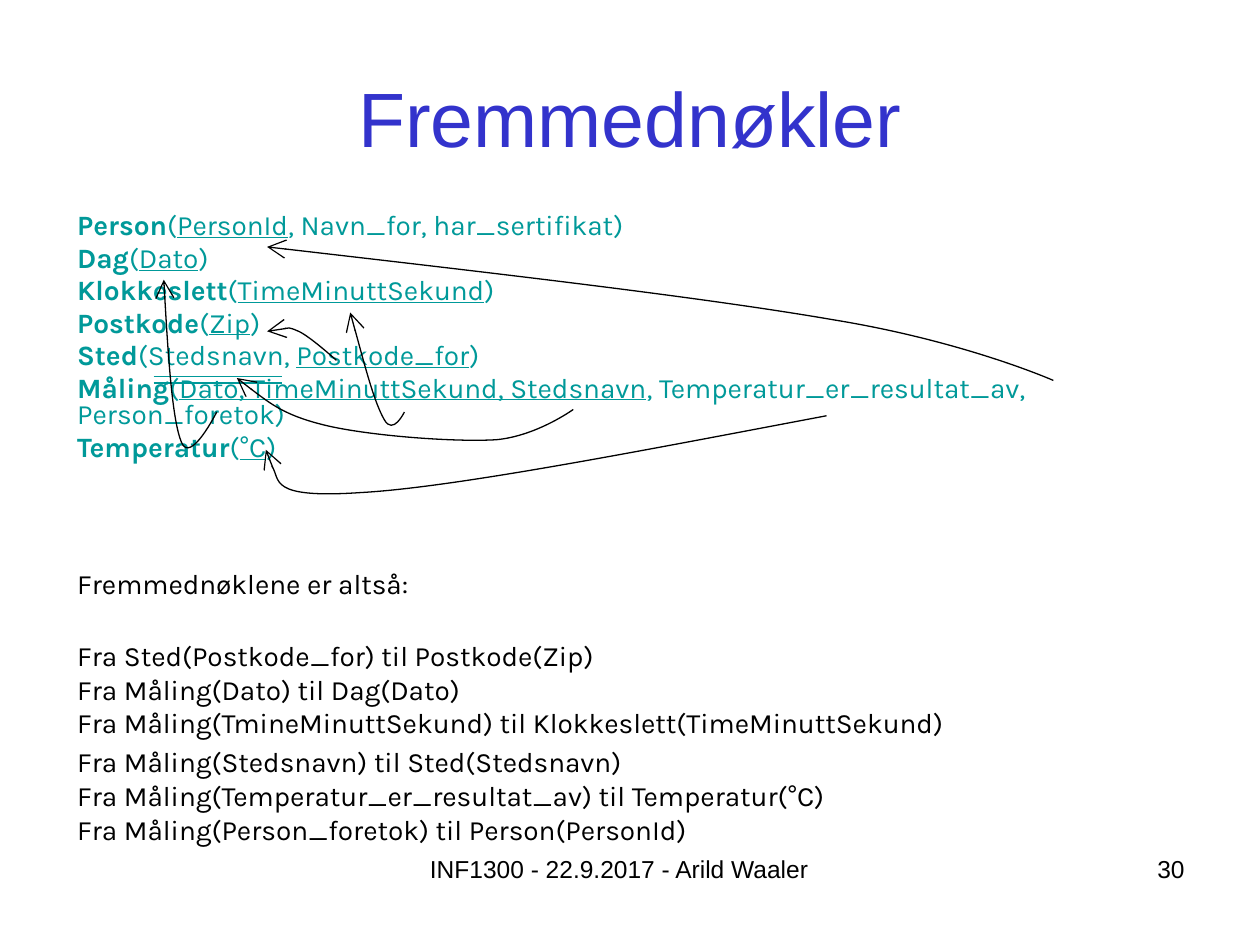
from copy import deepcopy
from dataclasses import dataclass
from lxml.etree import SubElement
from pptx import Presentation
from pptx.dml.color import RGBColor as Rgb
from pptx.enum.shapes import MSO_CONNECTOR as Conn
from pptx.enum.text import MSO_ANCHOR as Anchor, PP_ALIGN as Align
from pptx.oxml.ns import qn
from pptx.util import Inches, Pt


@dataclass(frozen=True)
class Theme:
    ink: Rgb = Rgb(0, 0, 0)
    teal: Rgb = Rgb(0, 0x99, 0x99)
    blue: Rgb = Rgb(0x33, 0x33, 0xCC)
    sans: str = "Arial"
    body: str = "Karla"
    head: float = 44
    text: float = 16
    foot: float = 14
    gap: float = 3.2
    line: float = 0.75


THEME = Theme()
CELL = 0.1  # inches; the slide is 100 columns by 75 rows
COLS, ROWS = 100, 75

# Relation name and its columns; "|" switches underlining on and off
TABLES = [
    ("Person", "(|PersonId|, Navn_for, har_sertifikat)"),
    ("Dag", "(|Dato|)"),
    ("Klokkeslett", "(|TimeMinuttSekund|)"),
    ("Postkode", "(|Zip|)"),
    ("Sted", "(Stedsnavn, |Postkode_for|)"),
    ("Måling", "(|Dato, TimeMinuttSekund, Stedsnavn|, "
               "Temperatur_er_resultat_av, Person_foretok)"),
    ("Temperatur", "(|°C|)"),
]

# Space before in points, then the lines of the paragraph
KEYS = [
    (59.2, ["Fremmednøklene er altså:"]),
    (22, ["Fra Sted(Postkode_for) til Postkode(Zip)",
          "Fra Måling(Dato) til Dag(Dato)",
          "Fra Måling(TmineMinuttSekund) til Klokkeslett(TimeMinuttSekund)"]),
    (THEME.gap, ["Fra Måling(Stedsnavn) til Sted(Stedsnavn)",
                 "Fra Måling(Temperatur_er_resultat_av) til Temperatur(°C)",
                 "Fra Måling(Person_foretok) til Person(PersonId)"]),
]

# Arrow end, then Bezier points in grid cells
ARROWS = [
    ("headEnd", [(21.2, 19.6), (38.5, 21.6), (55.8, 23.6), (66.2, 25.4),
                 (76.6, 27.1), (83.6, 30.2), (83.6, 30.2)]),
    ("headEnd", [(21.2, 26.3), (22, 26.1), (22.8, 25.9), (23.7, 26.3),
                 (24.6, 26.7), (26.7, 28.6), (26.7, 28.6)]),
    ("headEnd", [(18.8, 30), (20.7, 31.5), (22.6, 33), (26, 33.8),
                 (29.5, 34.6), (36.1, 35.1), (39.4, 34.9),
                 (42.6, 34.6), (45.5, 32.5), (45.5, 32.5)]),
    ("headEnd", [(13, 22.2), (13.3, 27.8), (13.7, 33.4), (14.4, 35.1),
                 (15.1, 36.9), (17.2, 32.7), (17.2, 32.7)]),
    ("headEnd", [(27.8, 24.8), (28.8, 28.4), (29.7, 31.9), (30.5, 33.3),
                 (31.2, 34.6), (32.1, 32.7), (32.1, 32.7)]),
    ("tailEnd", [(65.6, 33), (50.8, 35.8), (36, 38.7), (28.6, 39.1),
                 (21.2, 39.6), (21.1, 35.7), (21.1, 35.7)]),
]


def grid(*cells):
    return [Inches(cell * CELL) for cell in cells]


def style(item, **form):
    for name, value in form.items():
        setattr(item, name, value)


def add_run(para, text, color, size=THEME.text, face=THEME.body, **form):
    run = para.add_run()
    run.text = text
    style(run.font, size=Pt(size), name=face, **form)
    run.font.color.rgb = color


def add_break(para):
    """Break the line, keeping the format of the run before."""
    para.add_line_break()
    last, mark = para._p[-2:]
    mark.append(deepcopy(last.find(qn("a:rPr"))))


def add_box(slide, *cells):
    frame = slide.shapes.add_textbox(*grid(*cells)).text_frame
    frame.word_wrap = True
    return frame


def add_title(slide, text):
    title = slide.shapes.title
    style(title, **dict(zip(("left", "top", "width", "height"),
                            grid(5, 3, 90, 12.5))))
    title.text_frame.vertical_anchor = Anchor.MIDDLE
    para = title.text_frame.paragraphs[0]
    para.alignment = Align.CENTER
    add_run(para, text, THEME.blue, THEME.head, THEME.sans)


def add_tables(frame):
    for row, (name, cols) in enumerate(TABLES):
        para = frame.add_paragraph() if row else frame.paragraphs[0]
        style(para, line_spacing=0.8, space_before=Pt(THEME.gap))
        add_run(para, name, THEME.teal, bold=True)
        for part, text in enumerate(cols.split("|")):
            add_run(para, text, THEME.teal, underline=part % 2 == 1)


def add_keys(frame):
    for gap, lines in KEYS:
        para = frame.add_paragraph()
        para.space_before = Pt(gap)
        for row, text in enumerate(lines):
            if row:
                add_break(para)
            add_run(para, text, THEME.ink)


def add_body(slide):
    frame = add_box(slide, 5.15, 13.9, 91.4, 54.4)
    frame.margin_top = grid(3.1)[0]
    add_tables(frame)
    add_keys(frame)


def add_foot(slide, text, left, width, align):
    frame = add_box(slide, left, 67.8, width, 5.2)
    frame.margin_top = 0
    para = frame.paragraphs[0]
    para.alignment = align
    add_run(para, text, THEME.ink, THEME.foot, THEME.sans)


def add_rules(slide, left, right, rows):
    group = slide.shapes.add_group_shape()
    for row in rows:
        rule = group.shapes.add_connector(Conn.STRAIGHT,
                                          *grid(left, row, right, row))
        rule.line.color.rgb = THEME.teal
        rule.line.width = Pt(THEME.line)
        SubElement(rule.element.spPr, qn("a:effectLst"))


def bend(shape):
    """Turn each three line segments into one cubic Bezier curve."""
    path = next(shape.element.iter(qn("a:path")))
    lines = path.findall(qn("a:lnTo"))
    for start in range(0, len(lines), 3):
        cubic = SubElement(path, qn("a:cubicBezTo"))
        for line in lines[start:start + 3]:
            cubic.append(line[0])
            path.remove(line)


def add_arrow(slide, end, knots):
    first, *rest = [grid(*knot) for knot in knots]
    pen = slide.shapes.build_freeform(*first)
    pen.add_line_segments(rest, close=False)
    curve = pen.convert_to_shape()
    bend(curve)
    curve.shadow.inherit = False
    curve.fill.background()
    curve.line.color.rgb = THEME.ink
    curve.line.width = Pt(THEME.line)
    SubElement(curve.element.spPr.find(qn("a:ln")), qn("a:" + end),
               type="arrow", w="lg", len="lg")


def main():
    deck = Presentation()
    deck.slide_width, deck.slide_height = grid(COLS, ROWS)
    slide = deck.slides.add_slide(deck.slide_layouts[5])
    add_foot(slide, "INF1300 - 22.9.2017 - Arild Waaler", 25.8, 46.7,
             Align.CENTER)
    add_foot(slide, "30", 71.7, 23.3, Align.RIGHT)
    add_body(slide)
    add_title(slide, "Fremmednøkler")
    add_rules(slide, 12.2, 22.4, (30.4, 29.9))
    for end, knots in ARROWS:
        add_arrow(slide, end, knots)
    deck.save("out.pptx")


if __name__ == "__main__":
    main()
